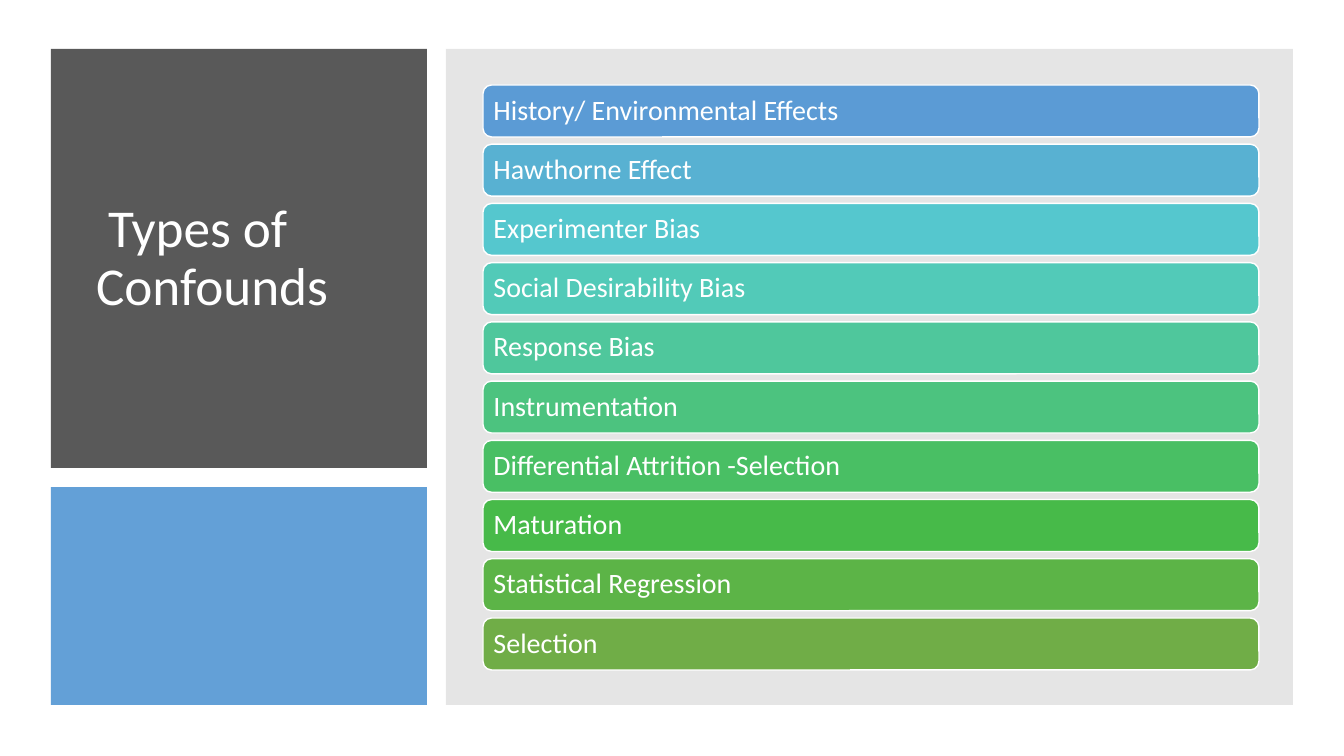
from dataclasses import dataclass

from lxml import etree
from pptx import Presentation
from pptx import util as u
from pptx.dml.color import RGBColor
from pptx.enum import shapes, text
from pptx.oxml.ns import qn

# Content
TITLE = " Types of Confounds"
CONFOUNDS = [
    ("History/ Environmental Effects", "5B9BD5"),
    ("Hawthorne Effect", "58B1D2"),
    ("Experimenter Bias", "55C7CE"),
    ("Social Desirability Bias", "52CAB8"),
    ("Response Bias", "4FC79C"),
    ("Instrumentation", "4CC37F"),
    ("Differential Attrition -Selection", "49BF64"),
    ("Maturation", "47BA49"),
    ("Statistical Regression", "5CB447"),
    ("Selection", "70AD47"),
]


@dataclass(frozen=True)
class Theme:
    font: str = "Calibri"
    title_size: int = 38
    bar_size: int = 20
    white: str = "FFFFFF"
    dark: str = "595959"
    blue: str = "5B9BD5"
    grey: str = "808080"


THEME = Theme()

# Layout in px: left, top, width, height
SLIDE_W, SLIDE_H = 1344, 756
EMU_PER_PX = u.Inches(7.5) / SLIDE_H
TITLE_BOX = (86, 81, 313, 357)
PANELS = [  # box, colour, opacity in percent
    ((51, 49, 376, 419), THEME.dark, 100),
    ((51, 487, 376, 218), THEME.blue, 95),
    ((446, 49, 847, 656), THEME.grey, 20),
]
LIST_BOX = (483, 85, 776, 585)
BAR_H = 52
BAR_INSET = 8


def px(n):
    return u.Emu(round(n * EMU_PER_PX))


def add_block(s, kind, box, color, opacity=100):
    sp = s.shapes.add_shape(kind, *map(px, box))
    sp.shadow.inherit = False
    sp.fill.solid()
    sp.fill.fore_color.rgb = RGBColor.from_string(color)
    sp.line.fill.background()
    if opacity < 100:
        clr = sp.element.spPr.find(".//" + qn("a:srgbClr"))
        etree.SubElement(clr, qn("a:alpha")).set("val", str(opacity * 1000))
    return sp


def write(sp, words, size):
    tf = sp.text_frame
    tf.text = words
    tf.word_wrap = True
    tf.auto_size = text.MSO_AUTO_SIZE.NONE
    tf.vertical_anchor = text.MSO_ANCHOR.MIDDLE
    p = tf.paragraphs[0]
    p.alignment = text.PP_ALIGN.LEFT
    p.line_spacing = 0.9
    p.font.name = THEME.font
    p.font.size = u.Pt(size)
    p.font.color.rgb = RGBColor.from_string(THEME.white)
    return tf


def main():
    prs = Presentation()
    prs.slide_width, prs.slide_height = px(SLIDE_W), px(SLIDE_H)
    s = prs.slides.add_slide(prs.slide_layouts[5])

    # Title, with the panels stacked behind it
    title = s.shapes.title
    title.left, title.top, title.width, title.height = map(px, TITLE_BOX)
    write(title, TITLE, THEME.title_size)
    for box, color, opacity in PANELS:
        panel = add_block(s, shapes.MSO_SHAPE.RECTANGLE, box, color, opacity)
        title.element.addprevious(panel.element)

    # Evenly spaced bars
    left, top, width, height = LIST_BOX
    pitch = (height - BAR_H) / (len(CONFOUNDS) - 1)
    for i, (name, color) in enumerate(CONFOUNDS):
        box = (left, top + i * pitch, width, BAR_H)
        bar = add_block(s, shapes.MSO_SHAPE.ROUNDED_RECTANGLE, box, color)
        bar.line.color.rgb = RGBColor.from_string(THEME.white)
        bar.line.width = u.Pt(1)
        tf = write(bar, name, THEME.bar_size)
        tf.margin_left = tf.margin_right = px(BAR_INSET)
        tf.margin_top = tf.margin_bottom = px(BAR_INSET)

    prs.save("out.pptx")


if __name__ == "__main__":
    main()
